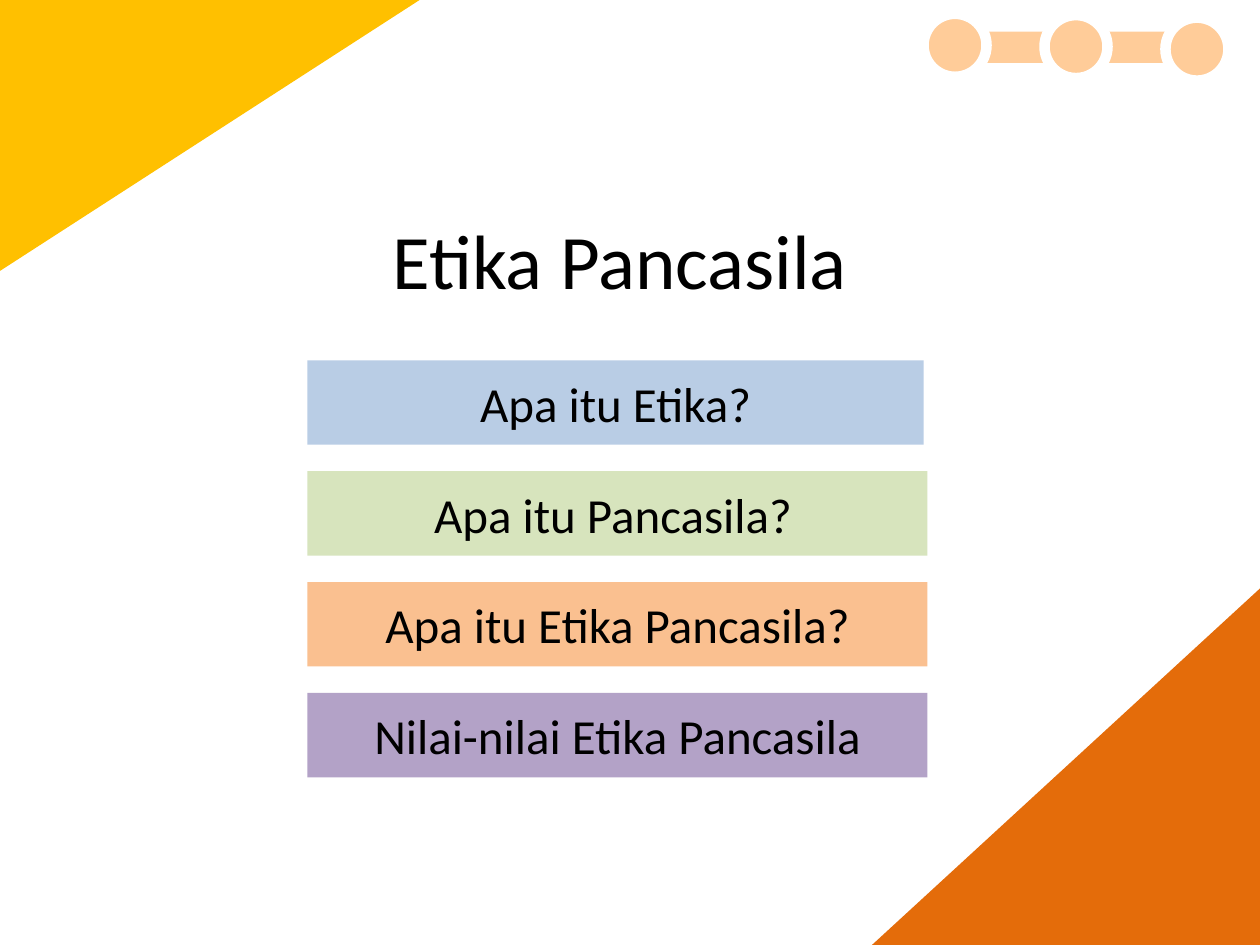
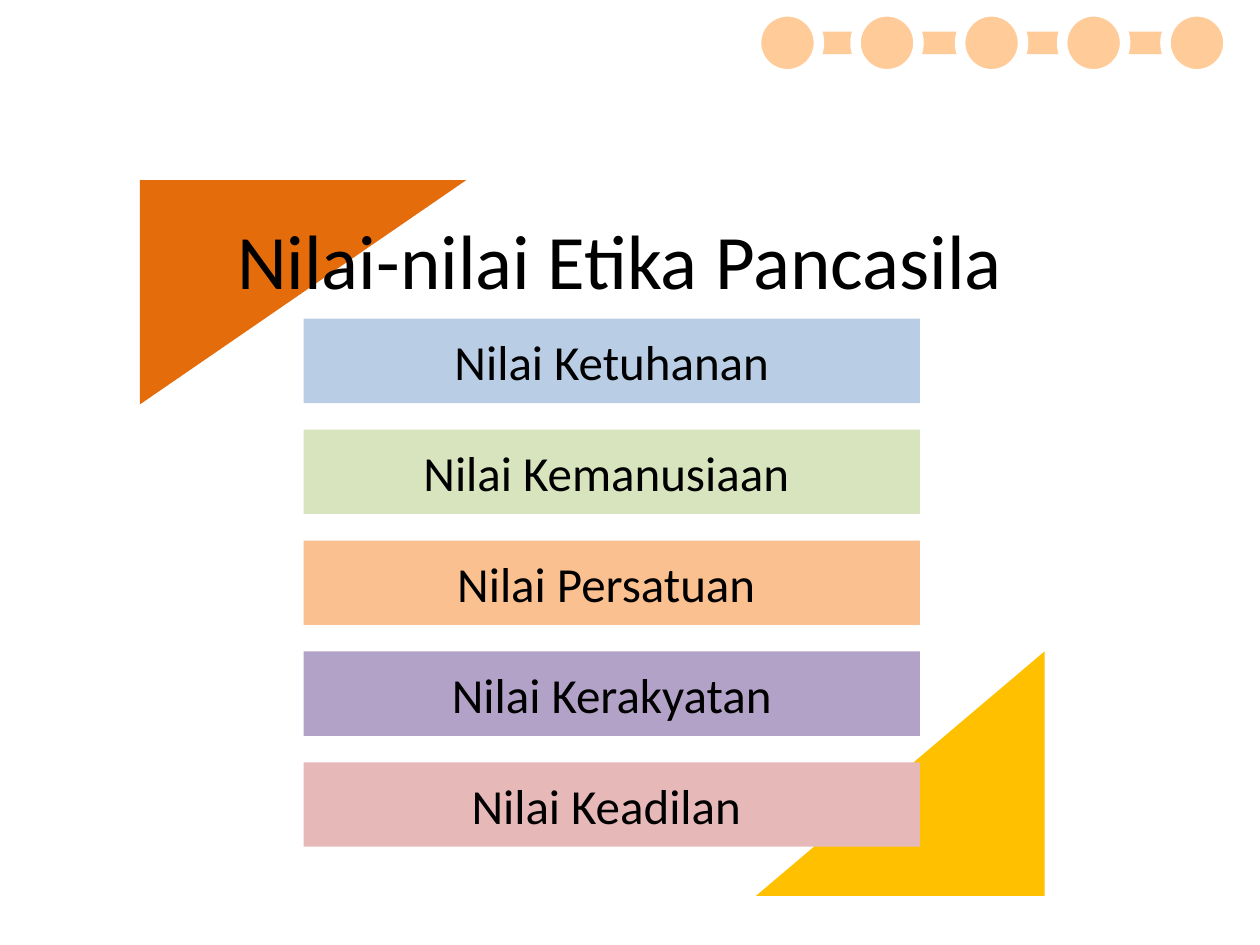
from pptx import Presentation
from pptx.dml.color import RGBColor
from pptx.enum.shapes import MSO_SHAPE
from pptx.enum.text import MSO_ANCHOR, PP_ALIGN
from pptx.util import Pt

PX = 9144  # EMU per px, 100 px to the inch
FONT = "Calibri"
HUES = {
    "ink": "000000", "ring": "FFFFFF", "bead": "FFCC99",
    "gold": "FFC000", "rust": "E46C0A",
    "blue": "B9CDE5", "green": "D7E4BD", "peach": "FAC090",
    "plum": "B3A2C7", "rose": "E6B9B8",
}
BARS = ["blue", "green", "peach", "plum", "rose"]
TITLE = (67, 125, 850, 161)
STEP, HIGH = 88, 67  # bar pitch and bar height
BEAD = 50


def hue(name):
    return RGBColor.from_string(HUES[name])


def emu(box):
    return [round(v * PX) for v in box]


def draw(slide, kind, box, fill):
    """Flat preset shape without outline or shadow."""
    shape = slide.shapes.add_shape(kind, *emu(box))
    shape.shadow.inherit = False
    shape.fill.solid()
    shape.fill.fore_color.rgb = hue(fill)
    shape.line.fill.background()
    return shape


def write(frame, text, size):
    """One centred line, set in the middle of its frame."""
    frame.word_wrap = True
    frame.vertical_anchor = MSO_ANCHOR.MIDDLE
    para = frame.paragraphs[0]
    para.alignment = PP_ALIGN.CENTER
    run = para.add_run()
    run.text = text
    run.font.name = FONT
    run.font.size = Pt(size)
    run.font.color.rgb = hue("ink")


def wedge(slide, box, fill, turn):
    """Corner triangle that fills box after a quarter turn."""
    left, top, wide, high = box
    shift = (wide - high) / 2
    frame = (left + shift, top - shift, high, wide)
    draw(slide, MSO_SHAPE.RIGHT_TRIANGLE, frame, fill).rotation = turn


def head(slide, text):
    """Title, raised above the wedges."""
    title = slide.shapes.title
    title.left, title.top, title.width, title.height = emu(TITLE)
    write(title.text_frame, text, 44)
    node = title._element
    node.getparent().append(node)


def stack(slide, left, top, rows):
    """Evenly spaced bars; each row is text, width and right inset."""
    for i, (text, wide, inset) in enumerate(rows):
        box = (left, top + i * STEP, wide, HIGH)
        bar = draw(slide, MSO_SHAPE.RECTANGLE, box, BARS[i])
        bar.text_frame.margin_right = inset * PX
        write(bar.text_frame, text, 28)


def chain(slide, band, beads):
    """Band with ringed beads, placed from the left end of the band."""
    draw(slide, MSO_SHAPE.RECTANGLE, band, "bead")
    for step, top in beads:
        box = (band[0] + step, top, BEAD, BEAD)
        bead = draw(slide, MSO_SHAPE.OVAL, box, "bead")
        bead.line.color.rgb = hue("ring")
        bead.line.width = Pt(6)


def page(deck, text, wedges, bars, beads):
    slide = deck.slides.add_slide(deck.slide_layouts[0])
    sub = slide.placeholders[1]._element
    sub.getparent().remove(sub)
    for box, fill, turn in wedges:
        wedge(slide, box, fill, turn)
    head(slide, text)
    stack(slide, *bars)
    chain(slide, *beads)


def main():
    deck = Presentation()
    deck.slide_width, deck.slide_height = emu((1000, 750))

    # Topics
    page(
        deck, "Etika Pancasila",
        [((0, 0, 333, 215), "gold", 90),
         ((692, 467, 308, 283), "rust", 270)],
        (244, 286, [
            ("Apa itu Etika?", 489, 10),
            ("Apa itu Pancasila?", 492, 17),
            ("Apa itu Etika Pancasila?", 492, 10),
            ("Nilai-nilai Etika Pancasila", 492, 10),
        ]),
        ((733, 25, 242, 25), [(0, 11), (96, 12), (192, 14)]),
    )

    # Values
    values = ["Nilai Ketuhanan", "Nilai Kemanusiaan ", "Nilai Persatuan ",
              "Nilai Kerakyatan", "Nilai Keadilan "]
    page(
        deck, "Nilai-nilai Etika Pancasila",
        [((600, 517, 229, 194), "gold", 270),
         ((111, 143, 259, 178), "rust", 90)],
        (241, 253, [(text, 489, 10) for text in values]),
        ((600, 25, 375, 18), [(x, 9) for x in (0, 79, 162, 243, 325)]),
    )

    deck.save("out.pptx")


if __name__ == "__main__":
    main()
